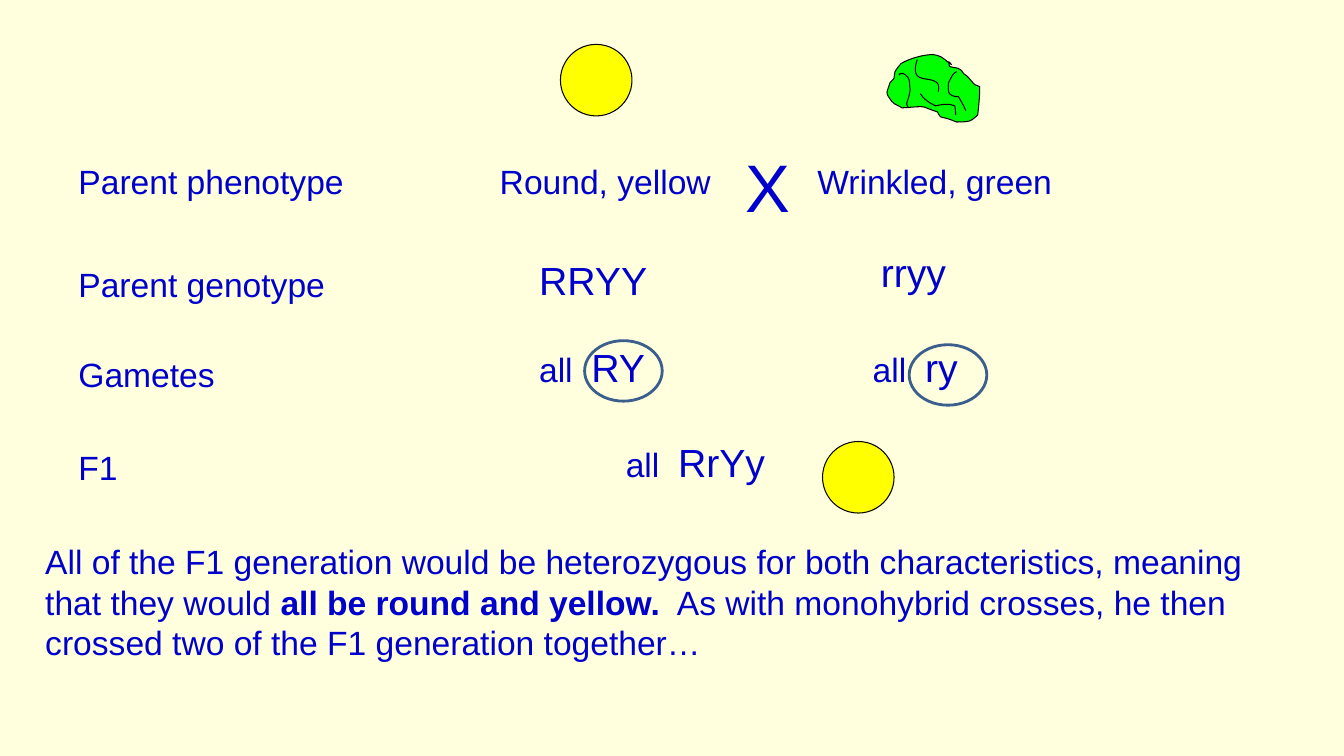
from pptx import Presentation
from pptx import util as u
from pptx.dml.color import RGBColor
from pptx.enum import shapes, text
from pptx.oxml import ns

CREAM = RGBColor(0xFF, 0xFF, 0xDE)
BLUE = RGBColor(0x00, 0x00, 0xCC)
YELLOW = RGBColor(0xFF, 0xFF, 0x00)
GREEN = RGBColor(0x00, 0xFF, 0x00)
BLACK = RGBColor(0x00, 0x00, 0x00)
STEEL = RGBColor(0x3A, 0x5F, 0x8C)

WIDTH, HEIGHT = 40 / 3, 7.5
BODY, GENES, CROSS = 24, 28, 48
PEA = 0.71

PEA_OUTLINE = [
    (65, 12), (60, 9), (56, 4), (51, 3), (43, 0), (23, 6), (15, 11),
    (13, 14), (10, 16), (9, 19), (7, 28), (10, 24), (4, 30),
    (3, 33), (2, 36), (1, 39), (0, 40), (2, 42), (2, 43),
    (8, 53), (8, 50), (16, 55), (44, 53), (32, 53), (51, 59),
    (55, 66), (52, 63), (62, 66), (65, 67), (70, 69), (70, 69),
    (74, 69), (79, 69), (83, 68), (86, 67), (91, 62), (91, 62),
    (92, 53), (93, 44), (93, 34), (92, 33), (90, 33), (88, 32),
    (84, 28), (82, 24), (77, 21), (73, 14), (70, 16), (63, 14),
    (62, 8), (61, 8), (65, 12),
]
PEA_WRINKLES = [
    [(31, 7), (30, 12), (27, 17), (31, 23), (35, 28), (49, 25), (52, 32),
     (53, 34), (52, 36), (52, 39)],
    [(70, 19), (65, 22), (65, 25), (62, 30), (62, 34), (61, 38), (63, 41),
     (65, 44), (72, 44), (72, 44), (74, 47), (75, 50), (77, 53),
     (78, 54), (79, 58), (79, 58)],
    [(22, 55), (20, 50), (20, 52), (22, 46), (23, 43), (24, 37), (24, 37),
     (23, 33), (24, 28), (22, 25), (13, 15), (13, 26), (13, 21)],
    [(34, 41), (38, 47), (43, 50), (49, 53), (54, 52), (62, 50), (68, 53),
     (69, 54), (69, 61), (69, 62)],
]


def inches(*lengths):
    return [u.Inches(length) for length in lengths]


def write(slide, box, *pieces):
    frame = slide.shapes.add_textbox(*inches(*box)).text_frame
    frame.word_wrap = True
    frame.auto_size = text.MSO_AUTO_SIZE.SHAPE_TO_FIT_TEXT
    paragraph = frame.paragraphs[0]
    for words, size, bold in pieces:
        run = paragraph.add_run()
        run.text = words
        run.font.name = "Arial"
        run.font.size = u.Pt(size)
        run.font.bold = bold
        run.font.color.rgb = BLUE


def outline(part, fill, line, weight):
    part.shadow.inherit = False
    if fill is None:
        part.fill.background()
    else:
        part.fill.solid()
        part.fill.fore_color.rgb = fill
    part.line.color.rgb = line
    part.line.width = u.Pt(weight)


def oval(slide, box, fill, line, weight):
    ring = slide.shapes.add_shape(shapes.MSO_SHAPE.OVAL, *inches(*box))
    outline(ring, fill, line, weight)


def round_pea(slide, left, top):
    oval(slide, (left, top, PEA, PEA), YELLOW, BLACK, 0.75)


def bend(curve):
    sides = list(curve.element.iter(ns.qn("a:lnTo")))
    for first, second, third in zip(sides[::3], sides[1::3], sides[2::3]):
        arc = first.makeelement(ns.qn("a:cubicBezTo"), {})
        first.addprevious(arc)
        for side in (first, second, third):
            arc.append(side[0])
            side.getparent().remove(side)


def wrinkled_pea(slide, left, top):
    pea = slide.shapes.add_group_shape()
    for controls in [PEA_OUTLINE] + PEA_WRINKLES:
        skin = controls is PEA_OUTLINE
        points = [inches(left + x / 100, top + y / 100) for x, y in controls]
        builder = pea.shapes.build_freeform(*points[0])
        builder.add_line_segments(points[1:], close=skin)
        curve = builder.convert_to_shape()
        bend(curve)
        outline(curve, GREEN if skin else None, BLACK, 0.75)


def row_labels(slide, left, top):
    rows = [("Parent phenotype", 0, 3.22), ("Parent genotype", 1.02, 2.83),
            ("Gametes", 1.91, 1.57), ("F1", 2.83, 0.86)]
    for label, drop, width in rows:
        write(slide, (left, top + drop, width, 0.5), (label, BODY, False))


def parent(slide, left, top, width, phenotype, genotype, gamete, offsets):
    genotype_at, gamete_at, ring_at = offsets
    write(slide, (left, top, width, 0.5), (phenotype, BODY, False))
    write(slide, (left + genotype_at[0], top + genotype_at[1], 1.5, 0.57),
          (genotype, GENES, False))
    write(slide, (left + gamete_at[0], top + gamete_at[1], 1.65, 0.57),
          ("all  ", BODY, False), (gamete, GENES, False))
    oval(slide, (left + ring_at[0], top + ring_at[1], 0.77, 0.6), None, STEEL, 2)


def parents(slide, left, top):
    round_pea(slide, left + 0.7, top)
    wrinkled_pea(slide, left + 3.93, top + 0.08)
    names = top + 1.11
    parent(slide, left, names, 2.36, "Round, yellow", "RRYY", "RY",
           ((0.39, 0.94), (0.39, 1.81), (0.94, 1.83)))
    parent(slide, left + 3.15, names, 2.6, "Wrinkled, green", "rryy", "ry",
           ((0.63, 0.86), (0.55, 1.81), (1.01, 1.87)))
    write(slide, (left + 2.44, names - 0.16, 0.63, 0.9), ("X", CROSS, False))


def offspring(slide, left, top, width):
    write(slide, (left, top, width, 0.57), ("all  ", BODY, False), ("RrYy", GENES, False))
    round_pea(slide, left + width, top + 0.08)


def conclusion(slide, box):
    write(slide, box,
          ("All of the F1 generation would be heterozygous for both characteristics, "
           "meaning that they would ", BODY, False),
          ("all be round and yellow. ", BODY, True),
          (" As with monohybrid crosses, he then crossed two of the F1 generation "
           "together…", BODY, False))


def main():
    deck = Presentation()
    deck.slide_width, deck.slide_height = inches(WIDTH, HEIGHT)
    slide = deck.slides.add_slide(deck.slide_layouts[6])
    slide.background.fill.solid()
    slide.background.fill.fore_color.rgb = CREAM
    row_labels(slide, 0.68, 1.55)
    parents(slide, 4.86, 0.44)
    offspring(slide, 6.11, 4.3, 2.05)
    conclusion(slide, (0.35, 5.32, 12.62, 1.31))
    deck.save("out.pptx")


if __name__ == "__main__":
    main()
